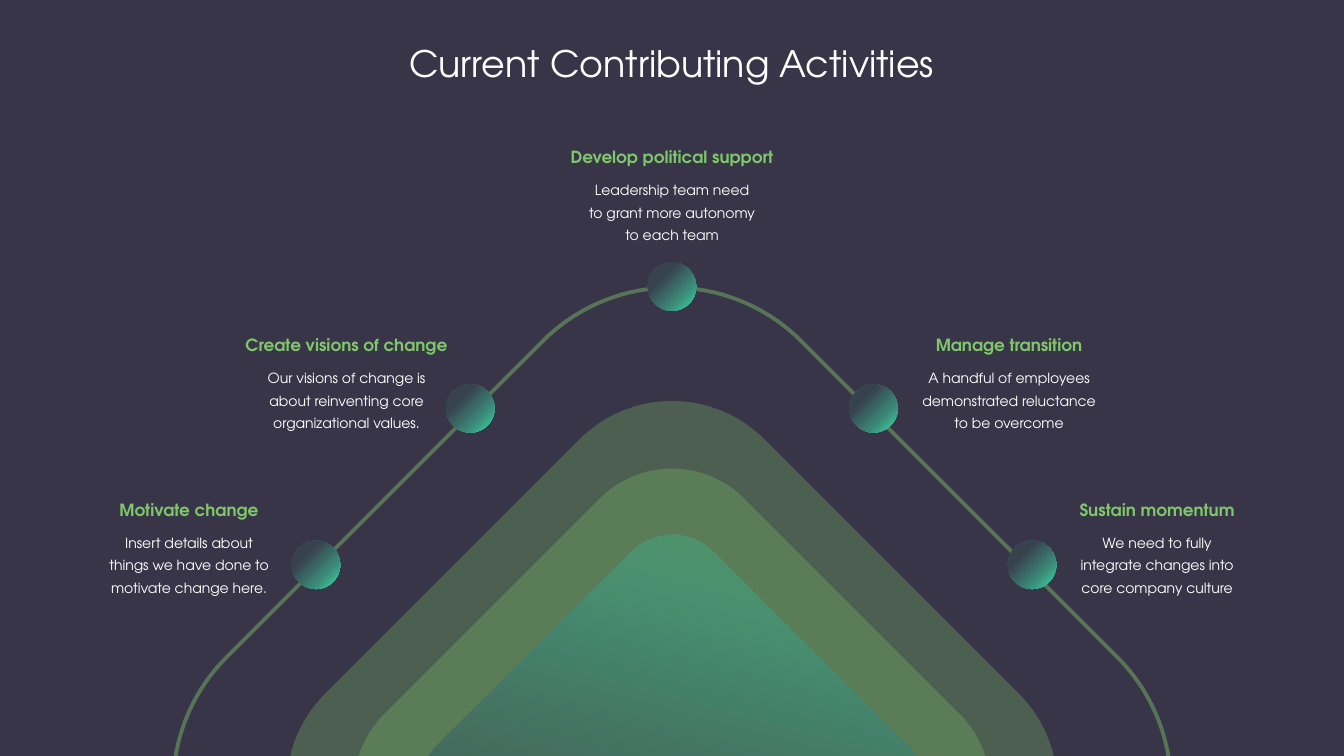
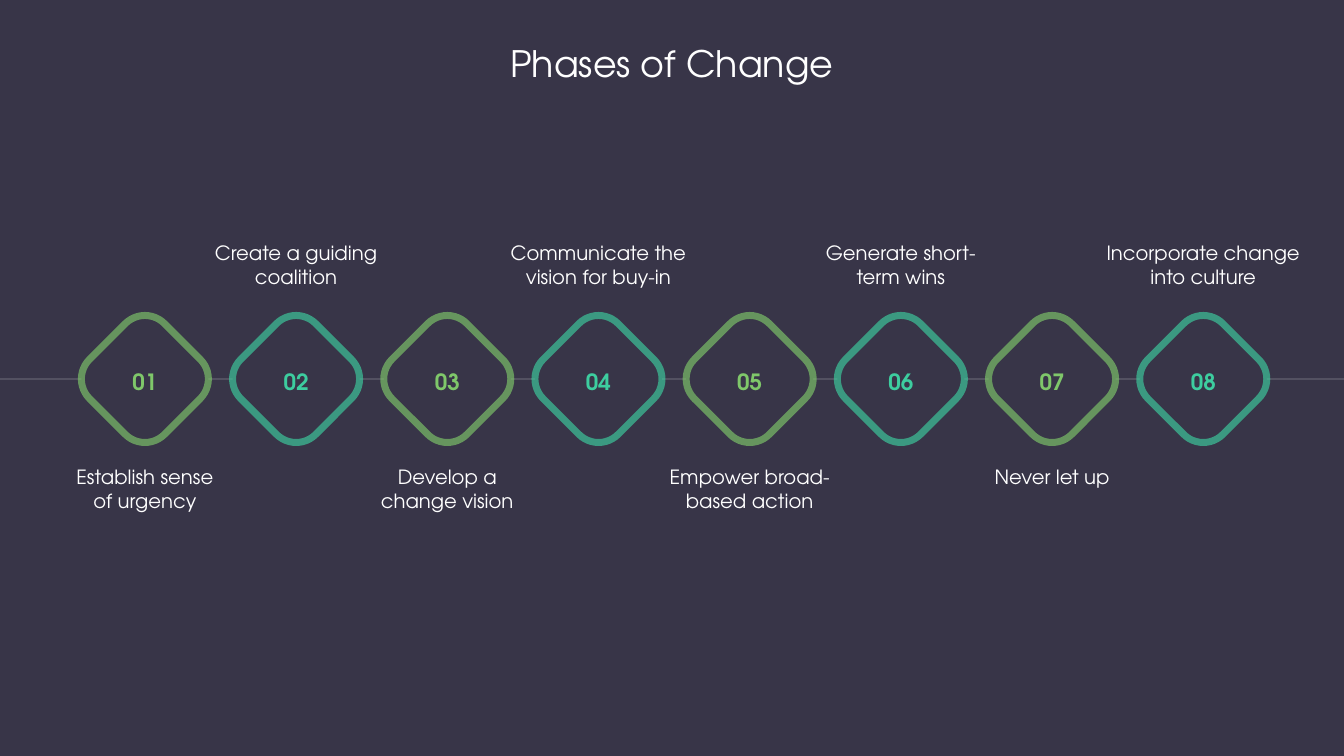
"""Build two dark slides on organizational change: a path of activities and a row of phases."""
import dataclasses

import lxml.etree
import pptx
import pptx.dml.color
import pptx.enum.shapes
import pptx.enum.text
import pptx.oxml.ns
import pptx.util


@dataclasses.dataclass(frozen=True)
class Theme:
    font: str = "TeX Gyre Adventor"
    back: str = "383548"
    white: str = "FFFFFF"
    green: str = "7FC76A"
    teal: str = "3DCD9F"
    stops: tuple = ((29, "37424F"), (68, "3A8877"), (94, "3DCD9F"))
    title: int = 26
    number: int = 16
    label: int = 14
    heading: int = 12
    body: int = 10


T = Theme()
PX = 9525
W, H = 1280, 720
MID = W // 2
qn = pptx.oxml.ns.qn
MSO = pptx.enum.shapes.MSO_SHAPE


def solid(fill, color, alpha=100):
    fill.solid()
    fill.fore_color.rgb = pptx.dml.color.RGBColor.from_string(color)
    if alpha < 100:
        clr = fill._xPr.find(qn("a:solidFill"))[0]
        lxml.etree.SubElement(clr, qn("a:alpha"), val=str(alpha * 1000))


def write(sp, text, size, color=T.white, bold=False, wrap=True, spacing=None):
    tf = sp.text_frame
    tf.word_wrap = wrap
    tf.auto_size = pptx.enum.text.MSO_AUTO_SIZE.NONE
    p = tf.paragraphs[0]
    p.alignment = pptx.enum.text.PP_ALIGN.CENTER
    if spacing:
        p.line_spacing = pptx.util.Pt(spacing)
    r = p.add_run()
    r.text = text
    r.font.name = T.font
    r.font.size = pptx.util.Pt(size)
    r.font.bold = bold
    r.font.color.rgb = pptx.dml.color.RGBColor.from_string(color)


prs = pptx.Presentation()
prs.slide_width, prs.slide_height = W * PX, H * PX
solid(prs.slide_master.background.fill, T.back)
layout = prs.slide_layouts[5]
title = layout.placeholders[0]
title.left, title.top, title.width, title.height = 240 * PX, 34 * PX, 800 * PX, 52 * PX

slides = []
for text in ("Current Contributing Activities", "Phases of Change"):
    sl = prs.slides.add_slide(layout)
    write(sl.shapes.title, text, T.title)
    slides.append(sl)
activities, phases = slides

PEAK_Y = 749
for size, adj, filled in ((774, 0.225, False), (592, 0.21, True), (485, 0.2, True)):
    sp = activities.shapes.add_shape(
        MSO.ROUNDED_RECTANGLE, MID * PX - size * PX // 2, PEAK_Y * PX - size * PX // 2,
        size * PX, size * PX)
    sp.adjustments[0] = adj
    sp.rotation = 45
    sp.shadow.inherit = False
    if filled:
        solid(sp.fill, T.green, 29)
        sp.line.fill.background()
    else:
        sp.fill.background()
        solid(sp.line.fill, T.green, 44)
        sp.line.width = pptx.util.Pt(2.75)

dots = [(640, 273), (448, 389), (301, 538), (832, 389), (983, 538)]
glossy = [(MSO.ROUNDED_RECTANGLE, MID, PEAK_Y, 372, (59, 68, 21))]
glossy += [(MSO.OVAL, x, y, 46, (100, 100, 100)) for x, y in dots]
for kind, x, y, size, alphas in glossy:
    sp = activities.shapes.add_shape(
        kind, x * PX - size * PX // 2, y * PX - size * PX // 2, size * PX, size * PX)
    sp.shadow.inherit = False
    sp.line.fill.background()
    sp.fill.gradient()
    grad = sp._element.spPr.find(qn("a:gradFill"))
    for child in list(grad):
        grad.remove(child)
    gs_lst = lxml.etree.SubElement(grad, qn("a:gsLst"))
    for (pos, color), alpha in zip(T.stops, alphas):
        gs = lxml.etree.SubElement(gs_lst, qn("a:gs"), pos=str(pos * 1000))
        clr = lxml.etree.SubElement(gs, qn("a:srgbClr"), val=color)
        lxml.etree.SubElement(clr, qn("a:alpha"), val=str(alpha * 1000))
    if kind == MSO.OVAL:
        circle = lxml.etree.SubElement(grad, qn("a:path"), path="circle")
        lxml.etree.SubElement(circle, qn("a:fillToRect"), r="100000", b="100000")
    else:
        sp.adjustments[0] = 0.149
        sp.rotation = 225
        lxml.etree.SubElement(grad, qn("a:lin"), ang=str(60 * 60000), scaled="0")

steps = [
    (180, 471, 173, "Motivate change",
     "Insert details about things we have done to motivate change here."),
    (330, 314, 173, "Create visions of change",
     "Our visions of change is about reinventing core organizational values."),
    (640, 135, 180, "Develop political support",
     "Leadership team need to grant more autonomy to each team"),
    (961, 314, 194, "Manage transition",
     "A handful of employees demonstrated reluctance to be overcome"),
    (1102, 471, 184, "Sustain momentum",
     "We need to fully integrate changes into core company culture"),
]
for x, y, w, heading, body in steps:
    sp = activities.shapes.add_textbox((x - 110) * PX, y * PX, 220 * PX, 29 * PX)
    write(sp, heading, T.heading, T.green, bold=True, wrap=False)
    sp = activities.shapes.add_textbox(x * PX - w * PX // 2, (y + 28) * PX, w * PX, 72 * PX)
    write(sp, body, T.body, spacing=16)

AXIS_Y = 361
axis = phases.shapes.add_connector(
    pptx.enum.shapes.MSO_CONNECTOR.STRAIGHT, 0, AXIS_Y * PX, W * PX, AXIS_Y * PX)
solid(axis.line.fill, T.white, 21)
axis.line.width = pptx.util.Pt(1)
lxml.etree.SubElement(axis._element.spPr, qn("a:effectLst"))

labels = [
    ("Establish sense of urgency", 163),
    ("Create a guiding coalition", 174),
    ("Develop a change vision", 163),
    ("Communicate the vision for buy-in", 206),
    ("Empower broad-based action", 185),
    ("Generate short-term wins", 174),
    ("Never let up", 163),
    ("Incorporate change into culture", 206),
]
SIDE = 101
for i, (text, w) in enumerate(labels):
    x = 138 + 144 * i
    color, y = ((T.green, 438), (T.teal, 225))[i % 2]
    sp = phases.shapes.add_shape(
        MSO.ROUNDED_RECTANGLE, x * PX - SIDE * PX // 2, AXIS_Y * PX - SIDE * PX // 2,
        SIDE * PX, SIDE * PX)
    sp.adjustments[0] = 0.261
    sp.rotation = 45
    sp.shadow.inherit = False
    solid(sp.fill, T.back)
    solid(sp.line.fill, color, 66)
    sp.line.width = pptx.util.Pt(5)
    sp = phases.shapes.add_textbox((x - 30) * PX, 346 * PX, 60 * PX, 36 * PX)
    write(sp, f"{i + 1:02}", T.number, color, bold=True, wrap=False)
    sp = phases.shapes.add_textbox(x * PX - w * PX // 2, y * PX, w * PX, 55 * PX)
    write(sp, text, T.label)

prs.save("out.pptx")
